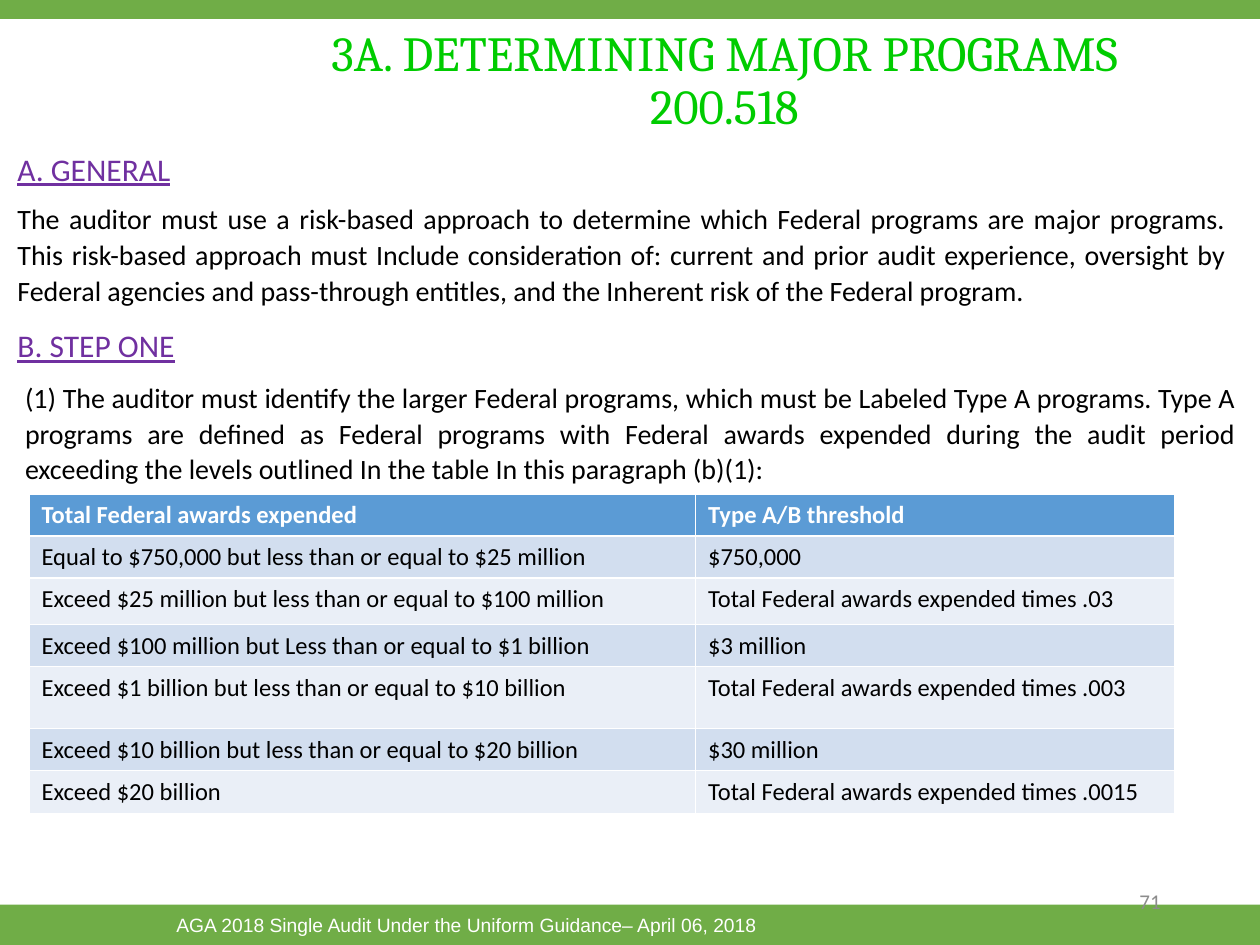
from lxml import etree
from pptx import Presentation
from pptx.dml.color import RGBColor
from pptx.enum.shapes import MSO_SHAPE
from pptx.enum.text import MSO_ANCHOR, PP_ALIGN
from pptx.oxml.ns import qn
from pptx.util import Inches, Pt

RECT = MSO_SHAPE.RECTANGLE
MIDDLE, TOP = MSO_ANCHOR.MIDDLE, MSO_ANCHOR.TOP
LEFT, CENTER, RIGHT, JUSTIFY = PP_ALIGN.LEFT, PP_ALIGN.CENTER, PP_ALIGN.RIGHT, PP_ALIGN.JUSTIFY
W, H = 10, 7.5
GREEN, PURPLE, BLACK, WHITE = "70AD47", "7030A0", "000000", "FFFFFF"
HEADER_FILL, BANDS = "5B9BD5", ("D2DEEF", "EAEFF7")

# Content
TITLE = "3A. DETERMINING MAJOR PROGRAMS 200.518"
FOOTER = "AGA 2018 Single Audit Under the Uniform Guidance– April 06, 2018"
PAGE = "71"
HEADINGS = [("A. GENERAL", 1.12), ("B. STEP ONE", 2.52)]  # text, top
BODIES = [  # text, left, top, width
    ("The auditor must use a risk-based approach to determine which Federal programs are "
     "major programs. This risk-based approach must Include consideration of: current and "
     "prior audit experience, oversight by Federal agencies and pass-through entitles, and "
     "the Inherent risk of the Federal program. ", 0.04, 1.53, 9.79),
    ("(1) The auditor must identify the larger Federal programs, which must be Labeled Type A "
     "programs. Type A programs are defined as Federal programs with Federal awards expended "
     "during the audit period exceeding the levels outlined In the table In this paragraph "
     "(b)(1):", 0.1, 2.95, 9.81),
]
ROWS = [
    ("Total Federal awards expended", "Type A/B threshold"),
    ("Equal to $750,000 but less than or equal to $25 million", "$750,000"),
    ("Exceed $25 million but less than or equal to $100 million",
     "Total Federal awards expended times .03"),
    ("Exceed $100 million but Less than or equal to $1 billion", "$3 million"),
    ("Exceed $1 billion but less than or equal to $10 billion",
     "Total Federal awards expended times .003"),
    ("Exceed $10 billion but less than or equal to $20 billion", "$30 million"),
    ("Exceed $20 billion", "Total Federal awards expended times .0015"),
]
COL_WIDTHS = (5.29, 3.8)
ROW_HEIGHTS = (0.33, 0.31, 0.37, 0.31, 0.49, 0.32, 0.34)


def rgb(value):
    return RGBColor.from_string(value)


def style(p, size, color, font="Calibri", align=LEFT, bold=False, underline=None):
    p.alignment = align
    f = p.font
    f.size, f.name, f.bold, f.underline = Pt(size), font, bold, underline
    f.color.rgb = rgb(color)


def add_bar(top, height):
    s = slide.shapes.add_shape(RECT, 0, Inches(top), Inches(W), Inches(height))
    s.shadow.inherit = False
    s.fill.solid()
    s.fill.fore_color.rgb = rgb(GREEN)
    s.line.fill.background()
    return s


def add_text(text, box, size, color, anchor=TOP, spacing=None, after=0, **kw):
    tf = slide.shapes.add_textbox(*map(Inches, box)).text_frame
    tf.word_wrap = True
    tf.vertical_anchor = anchor
    p = tf.paragraphs[0]
    p.text = text
    p.line_spacing = spacing
    p.space_after = Pt(after)
    style(p, size, color, **kw)
    return p


prs = Presentation()
prs.slide_width, prs.slide_height = Inches(W), Inches(H)
slide = prs.slides.add_slide(prs.slide_layouts[6])

# Top and bottom bars
add_bar(0, 0.15)
tf = add_bar(7.18, 0.32).text_frame
tf.margin_left = Inches(1.4)
tf.vertical_anchor = MIDDLE
tf.text = FOOTER
style(tf.paragraphs[0], 11, WHITE, font="Arial")

# Title with a thin letter outline
p = add_text(TITLE, (2, 0.23, 7.5, 0.85), 28, "00CC00", anchor=MIDDLE, spacing=0.9,
             font="Cambria", align=CENTER)
ln = etree.Element(qn("a:ln"), w=str(Pt(0.75)))
etree.SubElement(etree.SubElement(ln, qn("a:solidFill")), qn("a:srgbClr"), val="1F497D")
p.runs[0].font._element.insert(0, ln)

# Page number
add_text(PAGE, (7.06, 6.95, 2.25, 0.4), 12, "8C8C8C", anchor=MIDDLE, align=RIGHT)

# Headings and paragraphs
for text, top in HEADINGS:
    add_text(text, (0.04, top, 1.62, 0.41), 18, PURPLE, spacing=1.07, after=8, underline=True)
for text, left, top, width in BODIES:
    add_text(text, (left, top, width, 0.97), 16, BLACK, spacing=1.07, after=8, align=JUSTIFY)

# Threshold table
table = slide.shapes.add_table(
    len(ROWS), len(COL_WIDTHS), Inches(0.23), Inches(3.92),
    Inches(sum(COL_WIDTHS)), Inches(sum(ROW_HEIGHTS))).table
for col, width in zip(table.columns, COL_WIDTHS):
    col.width = Inches(width)
for i, (row, height, texts) in enumerate(zip(table.rows, ROW_HEIGHTS, ROWS)):
    row.height = Inches(height)
    header = i == 0
    for cell, text in zip(row.cells, texts):
        cell.text = text
        cell.fill.solid()
        cell.fill.fore_color.rgb = rgb(HEADER_FILL if header else BANDS[(i - 1) % 2])
        style(cell.text_frame.paragraphs[0], 14, WHITE if header else BLACK, bold=header)

prs.save("out.pptx")
